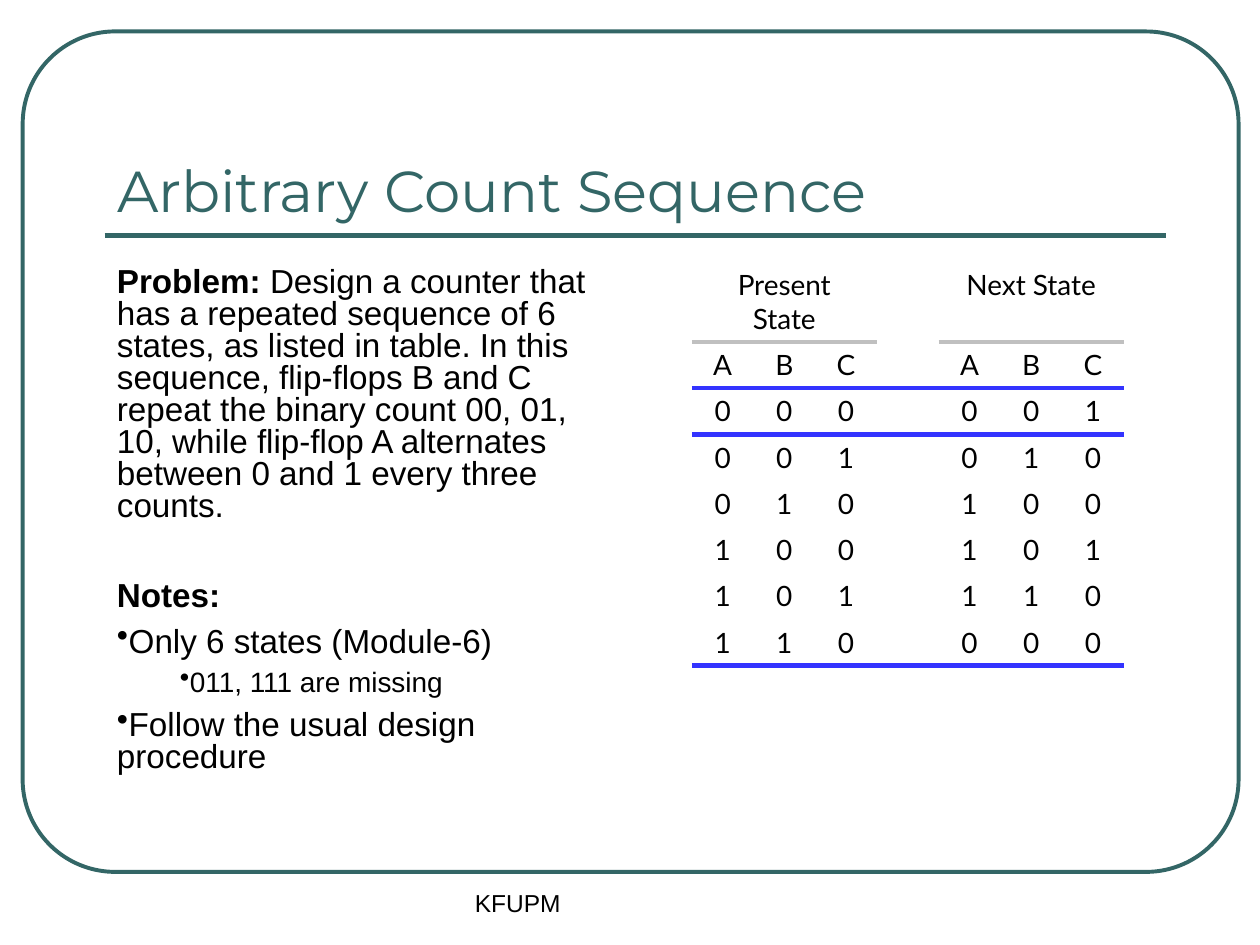
from lxml.etree import SubElement
from pptx import Presentation
from pptx.dml.color import RGBColor
from pptx.enum.shapes import MSO_CONNECTOR, MSO_SHAPE
from pptx.enum.text import MSO_ANCHOR, PP_ALIGN
from pptx.oxml.ns import qn
from pptx.util import Inches, Pt

TEAL = RGBColor(0x33, 0x66, 0x66)
BLACK = RGBColor(0, 0, 0)
SILVER = RGBColor(0xC0, 0xC0, 0xC0)
BLUE = RGBColor(0x33, 0x33, 0xFF)

TITLE = "Arbitrary Count Sequence"
FOOTER = "KFUPM"
PROBLEM = (
    "Design a counter that has a repeated sequence of 6 states, as listed in table. "
    "In this sequence, flip-flops B and C repeat the binary count 00, 01, 10, "
    "while flip-flop A alternates between 0 and 1 every three counts."
)
BODY = [
    dict(bold="Problem: ", text=PROBLEM),
    dict(bold="Notes:", before=33.5),
    dict(text="Only 6 states (Module-6)", bullet=True),
    dict(text="011, 111 are missing", bullet=True, level=1, size=16, before=6.5),
    dict(text="Follow the usual design procedure", bullet=True),
]
GROUPS = ["Present State", "Next State"]
FLIP_FLOPS = "ABC"
SEQUENCE = ["000", "001", "010", "100", "101", "110"]

LEFT, CONTENT_TOP = 0.83, 2.08
RULE_Y, RULE_RIGHT = 1.87, 9.25
TABLE_LEFT, COLUMN_WIDTH = 5.49, 0.49
HEADER_HEIGHT, ROW_HEIGHT = 0.58, 0.34
GROUP_STARTS = (0, len(FLIP_FLOPS) + 1)


def place(shape, left, top, width, height):
    shape.left, shape.top = Inches(left), Inches(top)
    shape.width, shape.height = Inches(width), Inches(height)


def style(paragraph, size, face, color=BLACK):
    paragraph.font.size = Pt(size)
    paragraph.font.name = face
    paragraph.font.color.rgb = color


def add_frame(slide):
    frame = slide.shapes.add_shape(
        MSO_SHAPE.ROUNDED_RECTANGLE, Inches(0.18), Inches(0.25), Inches(9.65), Inches(6.67)
    )
    frame.adjustments[0] = 0.11
    frame.shadow.inherit = False
    frame.fill.background()
    frame.line.color.rgb = TEAL
    frame.line.width = Pt(2.25)
    rule = slide.shapes.add_connector(
        MSO_CONNECTOR.STRAIGHT, Inches(LEFT), Inches(RULE_Y), Inches(RULE_RIGHT), Inches(RULE_Y)
    )
    rule.line.color.rgb = TEAL
    rule.line.width = Pt(3)
    SubElement(rule._element.spPr, qn("a:effectLst"))


def add_title(slide):
    title = slide.shapes.title
    place(title, LEFT, 0.58, 8.41, 1.25)
    title.text_frame.text = TITLE
    title.text_frame.vertical_anchor = MSO_ANCHOR.BOTTOM
    paragraph = title.text_frame.paragraphs[0]
    paragraph.alignment = PP_ALIGN.LEFT
    style(paragraph, 33, "Montserrat", TEAL)


def add_text_frame(slide, left, top, width, height):
    box = slide.shapes.add_textbox(Inches(left), Inches(top), Inches(width), Inches(height))
    box.text_frame.word_wrap = True
    return box.text_frame


def add_body(slide):
    frame = add_text_frame(slide, LEFT, CONTENT_TOP, 4.12, 4.41)
    for index, item in enumerate(BODY):
        paragraph = frame.add_paragraph() if index else frame.paragraphs[0]
        paragraph.line_spacing = 0.8
        paragraph.space_before = Pt(item.get("before", 7.8))
        if "bullet" in item:
            paragraph.level = item.get("level", 0)
            properties = paragraph._p.get_or_add_pPr()
            properties.set("marL", str(Inches(0.5) * paragraph.level))
            properties.set("indent", "0")
            SubElement(properties, qn("a:buChar"), char="•")
        style(paragraph, item.get("size", 19), "Arial")
        for key in ("bold", "text"):
            if key in item:
                run = paragraph.add_run()
                run.text = item[key]
                run.font.bold = key == "bold"


def set_border(cell, side, color):
    line = SubElement(cell._tc.get_or_add_tcPr(), qn(f"a:ln{side}"), w=str(Pt(3)))
    fill = SubElement(line, qn("a:solidFill"))
    SubElement(fill, qn("a:srgbClr"), val=str(color))


def add_state_table(slide):
    states = [FLIP_FLOPS] + SEQUENCE
    following = [FLIP_FLOPS] + SEQUENCE[1:] + SEQUENCE[:1]
    rows = [[""] * 7] + [[*now, "", *then] for now, then in zip(states, following)]
    for start, name in zip(GROUP_STARTS, GROUPS):
        rows[0][start] = name
    columns = len(rows[0])
    graphic = slide.shapes.add_table(
        len(rows), columns, Inches(TABLE_LEFT), Inches(CONTENT_TOP),
        Inches(COLUMN_WIDTH * columns), Inches(HEADER_HEIGHT + ROW_HEIGHT * len(states)),
    )
    table = graphic.table
    table.first_row = table.horz_banding = False
    table._tbl.tblPr.find(qn("a:tableStyleId")).text = "{2D5ABB26-0587-4C30-8999-92F81FD0307C}"
    for column in table.columns:
        column.width = Inches(COLUMN_WIDTH)
    for r, values in enumerate(rows):
        table.rows[r].height = Inches(ROW_HEIGHT if r else HEADER_HEIGHT)
        for c, value in enumerate(values):
            cell = table.cell(r, c)
            cell.text = value
            paragraph = cell.text_frame.paragraphs[0]
            paragraph.alignment = PP_ALIGN.CENTER
            style(paragraph, 16, "Lato")
            if not value:
                SubElement(paragraph._p, qn("a:endParaRPr"), sz="1600")
            header_line = None if c == len(FLIP_FLOPS) else SILVER
            edges = {0: header_line, 1: BLUE, len(rows) - 1: BLUE}
            for side, edge in (("T", r - 1), ("B", r)):
                if edges.get(edge):
                    set_border(cell, side, edges[edge])
            cell.fill.background()
    for start in GROUP_STARTS:
        table.cell(0, start).merge(table.cell(0, start + len(FLIP_FLOPS) - 1))


def add_footer(slide):
    paragraph = add_text_frame(slide, 3.67, 7, 3.16, 0.5).paragraphs[0]
    paragraph.text = FOOTER
    style(paragraph, 14, "Arial")


def main():
    presentation = Presentation()
    presentation.slide_width, presentation.slide_height = Inches(10), Inches(7.5)
    slide = presentation.slides.add_slide(presentation.slide_layouts[5])
    add_frame(slide)
    add_title(slide)
    add_body(slide)
    add_state_table(slide)
    add_footer(slide)
    presentation.save("out.pptx")


if __name__ == "__main__":
    main()
